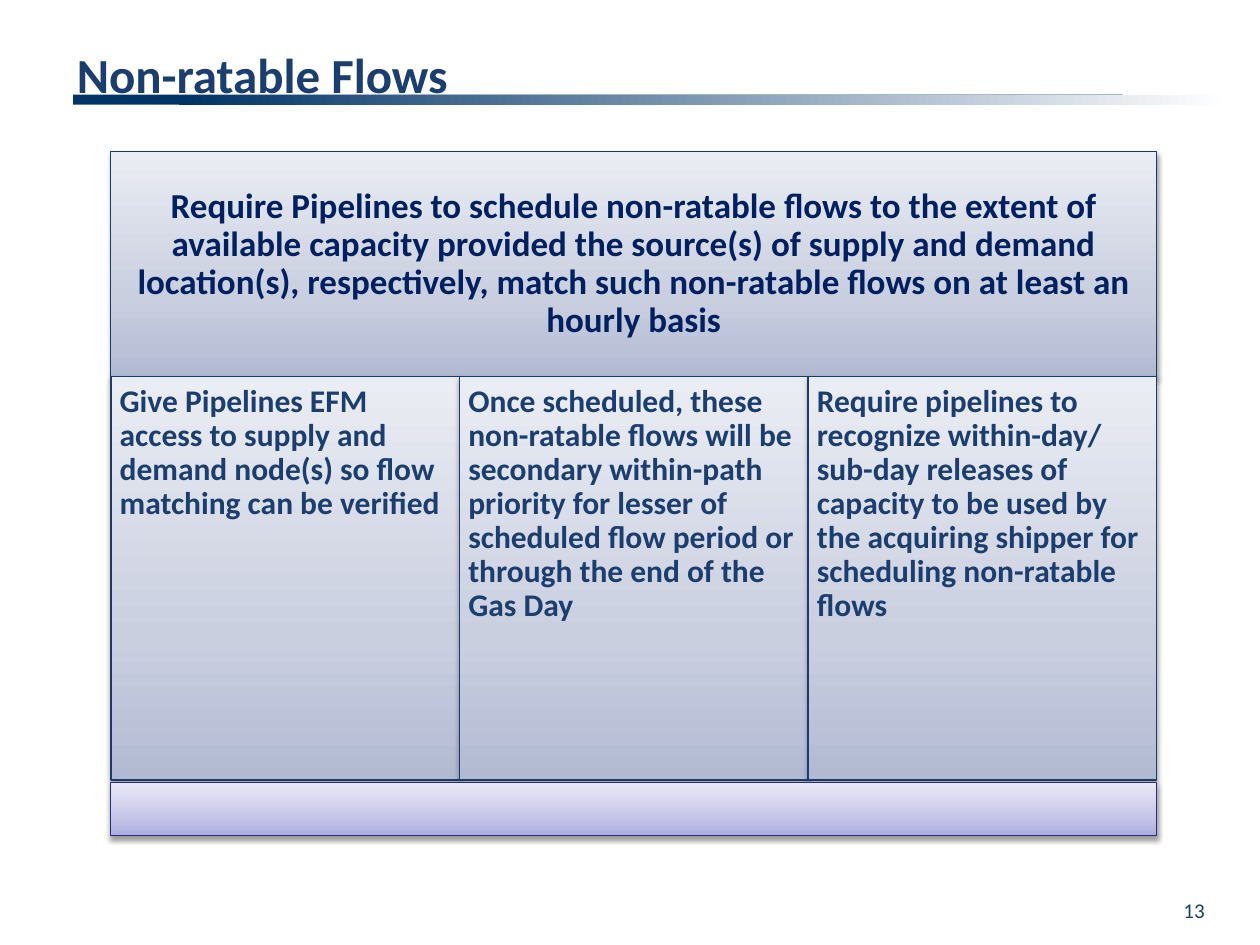
from lxml import etree
from pptx import Presentation
from pptx import util as u
from pptx.dml.color import RGBColor
from pptx.enum import shapes, text
from pptx.oxml import ns

COLORS = {
    "title": "1B3E6F", "heading": "002060", "bar": "003366", "white": "FFFFFF",
    "panel_line": "183C6F", "footer_line": "2A2A89", "shadow": "000000",
}
BAR_FADE = [(0, COLORS["bar"]), (100, COLORS["white"])]
PANEL_FILL = [(0, "B2BAD3"), (35, "CACFE0"), (100, "EAEDF3")]
FOOTER_FILL = [(0, "ADADE1"), (35, "C6C6E9"), (100, "E9E9F7")]

HEADING = ("Require Pipelines to schedule non-ratable flows to the extent of "
           "available capacity provided the source(s) of supply and demand "
           "location(s), respectively, match such non-ratable flows on at "
           "least an hourly basis")
MEASURES = [
    "Give Pipelines EFM access to supply and demand node(s) so flow matching "
    "can be verified",
    "Once scheduled, these non-ratable flows will be secondary within-path "
    "priority for lesser of scheduled flow period or through the end of the "
    "Gas Day",
    "Require pipelines to recognize within-day/ sub-day releases of capacity "
    "to be used by the acquiring shipper for scheduling non-ratable flows",
]


class Deck:
    """Places elements on a grid of 100 columns by 75 rows."""

    font = "Calibri"
    columns, rows = 100, 75

    def __init__(self):
        self.prs = Presentation()
        self.prs.slide_width, self.prs.slide_height = u.Inches(10), u.Inches(7.5)
        self.s = self.prs.slides.add_slide(self.prs.slide_layouts[5])

    def box(self, col, row, width, height):
        x = self.prs.slide_width / self.columns
        y = self.prs.slide_height / self.rows
        return [u.Emu(round(v)) for v in (col * x, row * y, width * x, height * y)]

    def set_text(self, sp, words, size, color="title", bold=True,
                 align=text.PP_ALIGN.LEFT, anchor=text.MSO_ANCHOR.MIDDLE,
                 inset=None, spacing=None):
        tf = sp.text_frame
        tf.word_wrap = True
        tf.auto_size = text.MSO_AUTO_SIZE.NONE
        tf.vertical_anchor = anchor
        if inset is not None:
            tf.margin_left = tf.margin_right = u.Inches(inset)
            tf.margin_top = tf.margin_bottom = u.Inches(inset)
        p = tf.paragraphs[0]
        p.alignment = align
        if spacing:
            p.line_spacing = spacing
        r = p.add_run()
        r.text = words
        r.font.name, r.font.size, r.font.bold = self.font, u.Pt(size), bold
        r.font.color.rgb = RGBColor.from_string(COLORS[color])

    def title(self, words, *place):
        sp = self.s.shapes.title
        sp.left, sp.top, sp.width, sp.height = self.box(*place)
        self.s.shapes.element.append(sp.element)  # in front of the bar
        self.set_text(sp, words, 28)

    def label(self, words, *place, **style):
        self.set_text(self.s.shapes.add_textbox(*self.box(*place)), words, **style)

    def rectangle(self, *place):
        sp = self.s.shapes.add_shape(shapes.MSO_SHAPE.RECTANGLE, *self.box(*place))
        sp.shadow.inherit = False
        sp.line.fill.background()
        return sp

    def solid(self, color, *place):
        sp = self.rectangle(*place)
        sp.fill.solid()
        sp.fill.fore_color.rgb = RGBColor.from_string(COLORS[color])

    def gradient(self, stops, angle, *place):
        """Add a rectangle filled with (percent, colour) stops."""
        sp = self.rectangle(*place)
        sp.fill.gradient()
        sp.fill.gradient_angle = angle
        gs_list = sp.element.spPr.find(".//" + ns.qn("a:gsLst"))
        for gs in list(gs_list):
            gs_list.remove(gs)
        for percent, color in stops:
            gs = etree.SubElement(gs_list, ns.qn("a:gs"), pos=str(percent * 1000))
            etree.SubElement(gs, ns.qn("a:srgbClr"), val=color)
        return sp

    def panel(self, stops, line, *place):
        """Add an outlined rectangle with a vertical gradient and soft shadow."""
        sp = self.gradient(stops, 90, *place)
        sp.line.color.rgb = RGBColor.from_string(COLORS[line])
        sp.line.width = u.Pt(0.75)
        effects = sp.element.spPr.find(ns.qn("a:effectLst"))
        shadow = etree.SubElement(
            effects, ns.qn("a:outerShdw"), blurRad=str(u.Pt(3.1)),
            dist=str(u.Pt(1.6)), dir="5400000", rotWithShape="0")
        color = etree.SubElement(shadow, ns.qn("a:srgbClr"), val=COLORS["shadow"])
        etree.SubElement(color, ns.qn("a:alpha"), val="38000")
        return sp


def main():
    deck = Deck()
    deck.solid("bar", 5.8, 7.5, 83.3, 0.8)
    deck.gradient(BAR_FADE, 0, 14.2, 7.5, 83.3, 0.8)
    deck.title("Non-ratable Flows", 5.1, 3.6, 71.7, 4.5)
    deck.label("13", 73.3, 69.6, 23.3, 5.2, size=12, bold=False,
               align=text.PP_ALIGN.RIGHT)

    left, width = 8.8, 83
    heading = deck.panel(PANEL_FILL, "panel_line", left, 12, width, 17.9)
    deck.set_text(heading, HEADING, 20, "heading", align=text.PP_ALIGN.CENTER,
                  inset=0.08, spacing=0.9)
    step = width / len(MEASURES)
    for i, measure in enumerate(MEASURES):
        sp = deck.panel(PANEL_FILL, "panel_line", left + i * step, 29.9, step, 32)
        deck.set_text(sp, measure, 18, anchor=text.MSO_ANCHOR.TOP, inset=0.07,
                      spacing=0.9)
    deck.panel(FOOTER_FILL, "footer_line", left, 62.1, width, 4.2)

    deck.prs.save("out.pptx")


if __name__ == "__main__":
    main()
